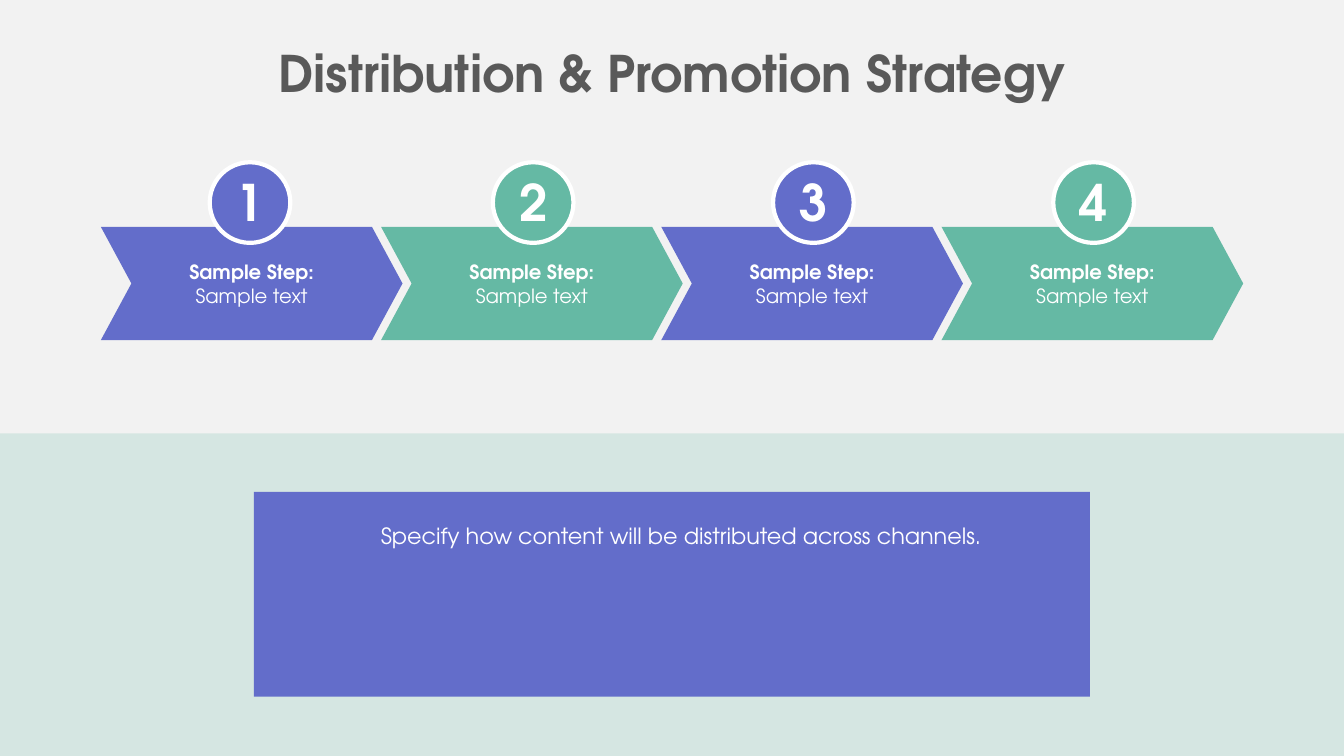
from lxml import etree
from pptx import Presentation
from pptx.dml.color import RGBColor
from pptx.enum import shapes, text
from pptx.oxml import ns
from pptx.util import Pt

COLORS = {
    "background": "F2F2F2",
    "title": "595959",
    "indigo": "636DCA",
    "green": "65B9A4",
    "white": "FFFFFF",
}
FONT = "TeX Gyre Adventor"
STEPS = [("Sample Step:", "Sample text")] * 4
KINDS = shapes.MSO_SHAPE


def color(name):
    return RGBColor.from_string(COLORS[name])


def add_block(slide, kind, box, fill, outline=None):
    shape = slide.shapes.add_shape(kind, *map(Pt, box))
    shape.shadow.inherit = False
    shape.fill.solid()
    shape.fill.fore_color.rgb = color(fill)
    if outline:
        shape.line.color.rgb = color(outline)
        shape.line.width = Pt(3)
    else:
        shape.line.fill.background()
    return shape


def add_run(paragraph, words, size, bold=False, tint="white"):
    run = paragraph.add_run()
    run.text = words
    run.font.name = FONT
    run.font.size = Pt(size)
    run.font.bold = bold
    run.font.color.rgb = color(tint)


def add_label(slide, box, words, size, bold=False, tint="white"):
    frame = slide.shapes.add_textbox(*map(Pt, box)).text_frame
    frame.word_wrap = True
    frame.auto_size = text.MSO_AUTO_SIZE.SHAPE_TO_FIT_TEXT
    paragraph = frame.paragraphs[0]
    paragraph.alignment = text.PP_ALIGN.CENTER
    add_run(paragraph, words, size, bold, tint)
    return paragraph


def add_arrow(slide, box, fill, heading, detail):
    arrow = add_block(slide, KINDS.CHEVRON, box, fill)
    arrow.adjustments[0] = 0.27
    frame = arrow.text_frame
    frame.vertical_anchor = text.MSO_ANCHOR.MIDDLE
    paragraph = frame.paragraphs[0]
    paragraph.alignment = text.PP_ALIGN.CENTER
    add_run(paragraph, heading, 14, bold=True)
    paragraph.add_line_break()
    add_run(paragraph, detail, 14)


def add_badge(slide, box, fill, number):
    left, top, width, height = box
    add_block(slide, KINDS.OVAL, box, fill, "white")
    label_box = (left + 8.64, top + 2.9, width - 17.28, 51)
    add_label(slide, label_box, str(number), 36, bold=True)


def add_process(slide, box):
    left, top, width, height = box
    pitch, diameter = 200.16, 57.6
    arrow_width = width - pitch * (len(STEPS) - 1)
    fills = ["indigo", "green"]
    for index, (heading, detail) in enumerate(STEPS):
        arrow_box = (left + index * pitch, top, arrow_width, height)
        add_arrow(slide, arrow_box, fills[index % 2], heading, detail)
    for index in range(len(STEPS)):
        inset = 79.9 if index else 77.8
        badge_box = (left + index * pitch + inset, top - 46.1, diameter, diameter)
        add_badge(slide, badge_box, fills[index % 2], index + 1)


def add_channels(slide, box):
    left, top, width, height = box
    band = add_block(slide, KINDS.RECTANGLE, box, "green")
    tint = band.fill._xPr.find(".//" + ns.qn("a:srgbClr"))
    etree.SubElement(tint, ns.qn("a:alpha"), val="20000")
    panel_box = (left + 181.4, top + 41.8, width - 2 * 181.4, 146.2)
    panel = add_block(slide, KINDS.ROUNDED_RECTANGLE, panel_box, "indigo")
    panel.adjustments[0] = 0
    paragraph = add_label(
        slide,
        (left + 198, top + 59.8, 563, 32.4),
        "Specify how content will be distributed across channels.",
        16,
    )
    paragraph.space_before = Pt(6)
    properties = paragraph._p.get_or_add_pPr()
    properties.set("marL", str(Pt(14.4)))
    properties.set("indent", "0")


def main():
    presentation = Presentation()
    presentation.slide_width = Pt(960)
    presentation.slide_height = Pt(540)
    slide = presentation.slides.add_slide(presentation.slide_layouts[6])
    slide.background.fill.solid()
    slide.background.fill.fore_color.rgb = color("background")
    add_label(
        slide,
        (161, 26.7, 638, 51),
        "Distribution & Promotion Strategy",
        36,
        bold=True,
        tint="title",
    )
    add_process(slide, (72, 162, 816, 81))
    add_channels(slide, (0, 309.6, 960, 230.4))
    presentation.save("out.pptx")


if __name__ == "__main__":
    main()
